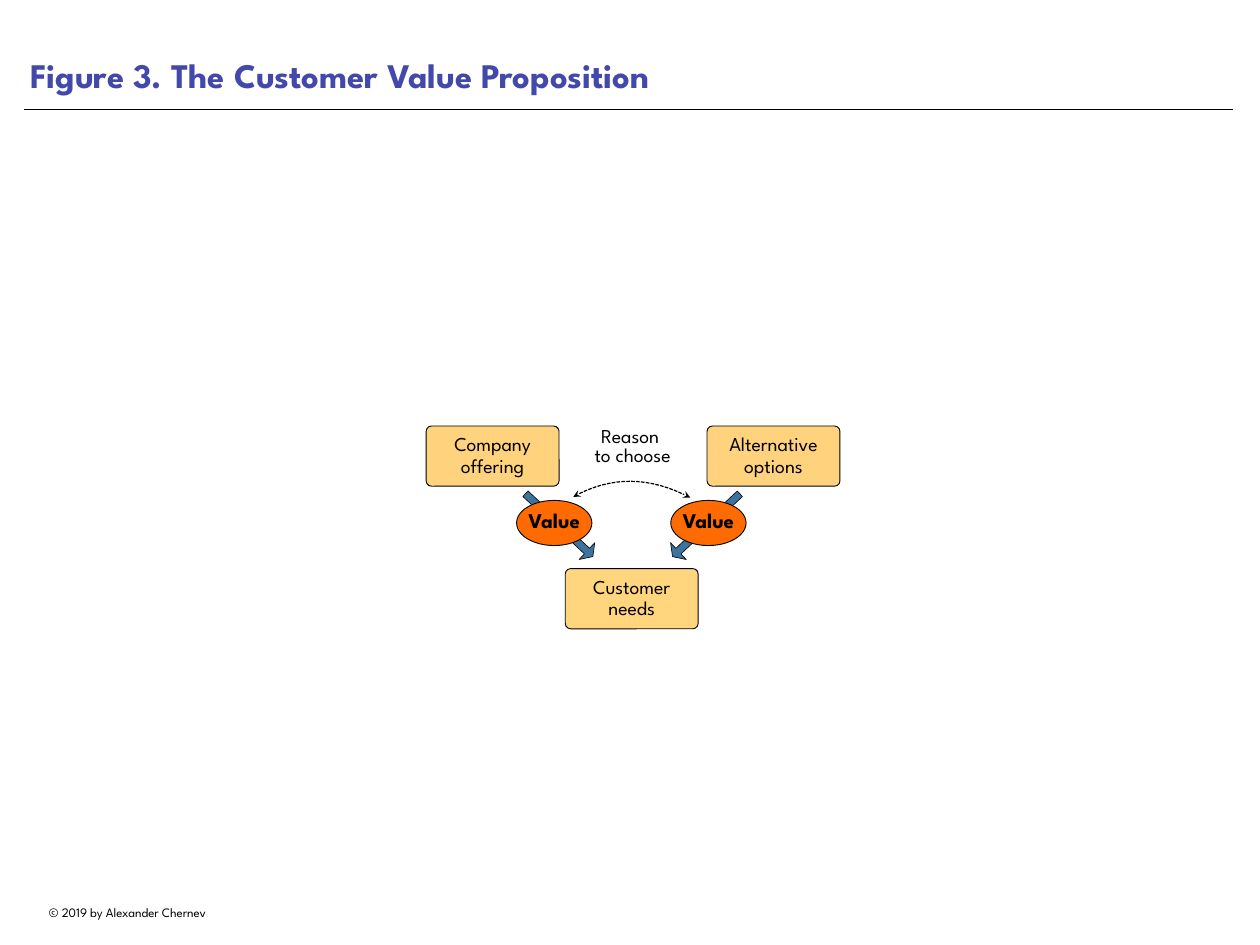
from lxml.etree import SubElement
from pptx import Presentation
from pptx.dml.color import RGBColor
from pptx.enum.dml import MSO_LINE
from pptx.enum.shapes import MSO_CONNECTOR, MSO_SHAPE
from pptx.enum.text import MSO_ANCHOR, PP_ALIGN
from pptx.oxml.ns import qn
from pptx.util import Pt

SCALE = 9144
FONT = "League Spartan"
BLACK = RGBColor(0x00, 0x00, 0x00)
INDIGO = RGBColor(0x43, 0x49, 0xAA)
SAND = RGBColor(0xFF, 0xD3, 0x7D)
CREAM = RGBColor(0xFF, 0xD6, 0x7E)
STEEL = RGBColor(0x3D, 0x74, 0x9D)
ORANGE = RGBColor(0xFF, 0x6B, 0x00)


def px(*sizes):
    return [size * SCALE for size in sizes]


def write(shape, lines, size, color=BLACK, bold=False, inset=0, space=1.0,
          align=PP_ALIGN.CENTER, anchor=MSO_ANCHOR.MIDDLE, wrap=True):
    frame = shape.text_frame
    frame.word_wrap = wrap
    frame.vertical_anchor = anchor
    frame.margin_left = frame.margin_right = inset * SCALE
    frame.margin_top = frame.margin_bottom = inset * SCALE
    para = frame.paragraphs[0]
    para.alignment = align
    para.line_spacing = space
    for index, line in enumerate(lines):
        if index:
            para.add_line_break()
        run = para.add_run()
        run.text = line
        run.font.name = FONT
        run.font.size = Pt(size)
        run.font.bold = bold
        run.font.color.rgb = color


def add_form(slide, kind, box, fill, width):
    shape = slide.shapes.add_shape(kind, *px(*box))
    shape.shadow.inherit = False
    shape.fill.solid()
    shape.fill.fore_color.rgb = fill
    shape.line.color.rgb = BLACK
    shape.line.width = Pt(width)
    return shape


def add_card(slide, box, label, fill):
    card = add_form(slide, MSO_SHAPE.ROUNDED_RECTANGLE, box, fill, 0.75)
    card.adjustments[0] = 0.09
    write(card, [label], 16, inset=4, space=0.9)


def add_value(slide, box, angle, shift):
    left, top, width, height = box
    long, thick = 104, 26
    mid, base = left + width // 2 + shift, top + 28
    place = (mid - long // 2, base - thick // 2, long, thick)
    arrow = add_form(slide, MSO_SHAPE.RIGHT_ARROW, place, STEEL, 0.5)
    arrow.adjustments[0] = 0.33
    arrow.adjustments[1] = 0.35
    arrow.rotation = angle
    oval = add_form(slide, MSO_SHAPE.OVAL, box, ORANGE, 0.75)
    write(oval, ["Value"], 17, bold=True, space=0.7)


def add_curve(slide, box):
    left, top, width, height = box
    ends = [(0, height), (43, -6), (87, -5), (width, height + 1)]
    steps = 16
    points = []
    for step in range(steps + 1):
        t = step / steps
        parts = ((1 - t) ** 3, 3 * t * (1 - t) ** 2, 3 * t * t * (1 - t), t ** 3)
        x = left + sum(part * end[0] for part, end in zip(parts, ends))
        y = top + sum(part * end[1] for part, end in zip(parts, ends))
        points.append((round(x * SCALE), round(y * SCALE)))
    pen = slide.shapes.build_freeform(*points[0], scale=1.0)
    pen.add_line_segments(points[1:], close=False)
    curve = pen.convert_to_shape()
    curve.shadow.inherit = False
    curve.fill.background()
    curve.line.color.rgb = BLACK
    curve.line.width = Pt(1)
    curve.line.dash_style = MSO_LINE.SQUARE_DOT
    stroke = curve.element.spPr.find(qn("a:ln"))
    for tip in ("a:headEnd", "a:tailEnd"):
        SubElement(stroke, qn(tip), type="stealth")


def add_header(slide, box):
    left, top, width, height = box
    title = slide.shapes.add_textbox(*px(left, top, width, height - 9))
    write(title, ["Figure 3. The Customer Value Proposition"], 28, INDIGO, True,
          inset=7, align=PP_ALIGN.LEFT, anchor=MSO_ANCHOR.BOTTOM)
    base = top + height
    rule = slide.shapes.add_connector(
        MSO_CONNECTOR.STRAIGHT, *px(left, base, left + width, base))
    rule.line.color.rgb = BLACK
    rule.line.width = Pt(0.5)
    SubElement(rule.element.spPr, qn("a:effectLst"))


def add_chart_area(slide, box):
    left, top, width, height = box
    wide, high = 150, 68
    right = left + width - wide
    add_card(slide, (left, top, wide, high), "Company offering", SAND)
    add_card(slide, (right, top, wide, high), "Alternative options", SAND)
    add_curve(slide, (left + 166, top + 62, 132, 18))
    reason = slide.shapes.add_textbox(*px(left + 160, top + 3, 146, 55))
    write(reason, ["Reason ", "to choose"], 16, space=0.8, anchor=MSO_ANCHOR.TOP)
    for start, angle, shift in ((102, 43, 6), (276, 137, -2)):
        add_value(slide, (left + start, top + 84, 85, 51), angle, shift)
    needs = (left + 157, top + height - high, wide, high)
    add_card(slide, needs, "Customer needs", CREAM)


def add_footer(slide, box):
    note = slide.shapes.add_textbox(*px(*box))
    write(note, ["© 2019 by Alexander Chernev"], 10.5, inset=5, wrap=False,
          anchor=MSO_ANCHOR.TOP)


def main():
    deck = Presentation()
    deck.slide_width, deck.slide_height = px(1422, 1067)
    slide = deck.slides.add_slide(deck.slide_layouts[6])
    add_header(slide, (27, 0, 1365, 124))
    add_chart_area(slide, (481, 481, 467, 229))
    add_footer(slide, (27, 1016, 234, 28))
    deck.save("out.pptx")


if __name__ == "__main__":
    main()
